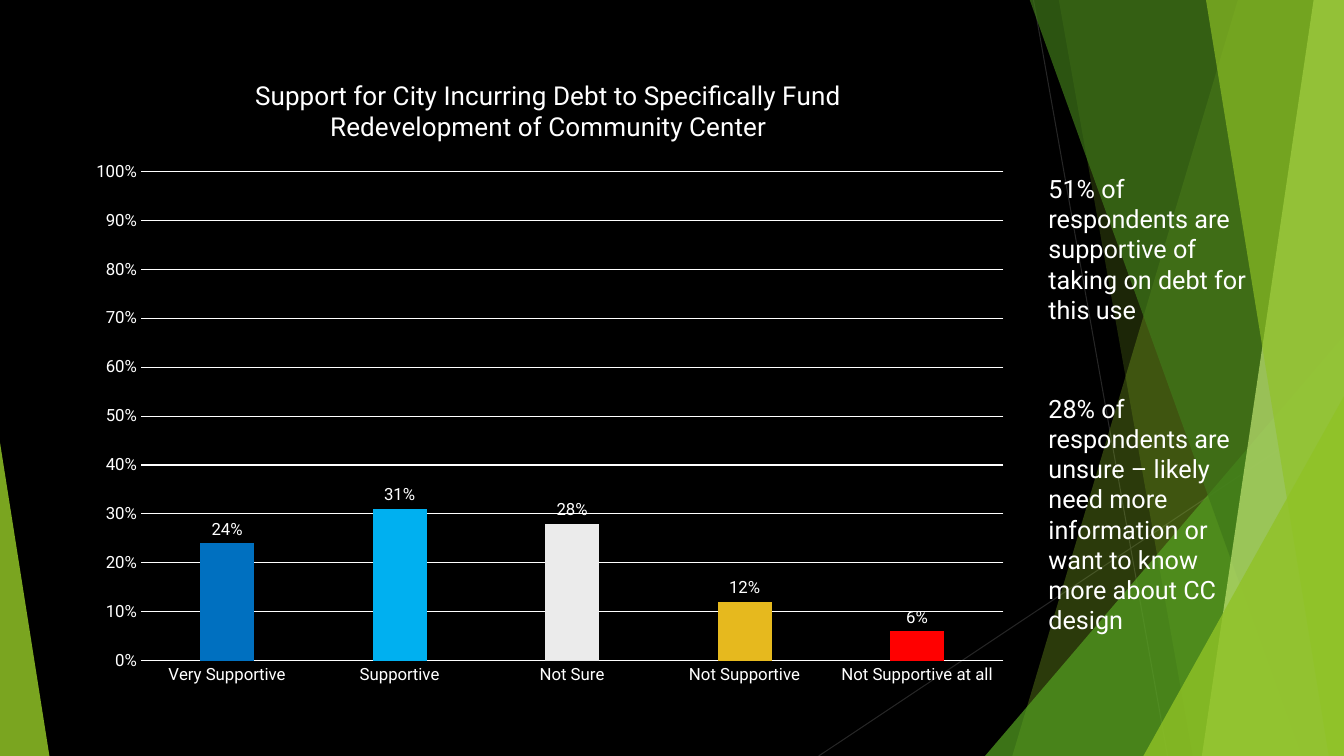
from dataclasses import dataclass

import lxml.etree
import pptx
import pptx.chart.data
import pptx.dml.color
import pptx.enum.chart
import pptx.enum.shapes
import pptx.enum.text
import pptx.oxml
import pptx.oxml.ns
import pptx.util

RGBColor = pptx.dml.color.RGBColor
PX = 9144  # EMU in one px, 100 px to the inch
WIDTH, HEIGHT = 1333, 750
FONT = "Roboto"

BLACK = RGBColor(0x00, 0x00, 0x00)
WHITE = RGBColor(0xFF, 0xFF, 0xFF)
CHARCOAL = RGBColor(0x26, 0x26, 0x26)
LIME = RGBColor(0x90, 0xC2, 0x26)
GREEN = RGBColor(0x54, 0xA0, 0x21)
FOREST = RGBColor(0x3F, 0x78, 0x19)
PALE_LIME = RGBColor(0xC0, 0xE4, 0x74)
BLUE = RGBColor(0x00, 0x70, 0xC0)
SKY = RGBColor(0x00, 0xB0, 0xF0)
SILVER = RGBColor(0xEB, 0xEB, 0xEB)
GOLD = RGBColor(0xE6, 0xB9, 0x1E)
RED = RGBColor(0xFF, 0x00, 0x00)


@dataclass(frozen=True)
class Ray:
    """A thin line across the background."""
    start: tuple[int, int]
    end: tuple[int, int]


@dataclass(frozen=True)
class Facet:
    """A slanted panel that reaches the right edge of the slide."""
    top_x: int
    bottom_x: int
    color: RGBColor
    opacity: int


@dataclass(frozen=True)
class Wedge:
    """A triangle on the bottom edge; apex 0 is left, 1 is right."""
    left: int
    top: int
    width: int
    apex: int
    color: RGBColor
    opacity: int


@dataclass(frozen=True)
class Answer:
    label: str
    share: float
    color: RGBColor


@dataclass(frozen=True)
class Remark:
    top: int
    height: int
    text: str


RAYS = [Ray((1025, 0), (1158, 750)), Ray((1333, 403), (812, 750))]
DECORATION = [
    Facet(1228, 1004, LIME, 30),
    Facet(1050, 1183, LIME, 20),
    Wedge(977, 333, 356, 1, GREEN, 72),
    Facet(1021, 1291, FOREST, 70),
    Facet(1303, 1192, PALE_LIME, 70),
    Facet(1196, 1318, LIME, 65),
    Wedge(1134, 393, 199, 1, LIME, 80),
    Wedge(0, 439, 49, 0, LIME, 85),
]
CHART_TITLE = ("Support for City Incurring Debt to Specifically Fund "
               "Redevelopment of Community Center")
ANSWERS = [
    Answer("Very Supportive", 0.24, BLUE),
    Answer("Supportive", 0.31, SKY),
    Answer("Not Sure", 0.28, SILVER),
    Answer("Not Supportive", 0.12, GOLD),
    Answer("Not Supportive at all", 0.06, RED),
]
REMARKS = [
    Remark(167, 162, "51% of respondents are supportive of taking on debt for this use"),
    Remark(385, 252, "28% of respondents are unsure – likely need more information "
                     "or want to know more about CC design"),
]


def style_font(font, size: float) -> None:
    font.name = FONT
    font.size = pptx.util.Pt(size)
    font.bold = False
    font.color.rgb = WHITE


def style_line(line, color: RGBColor) -> None:
    line.color.rgb = color
    line.width = pptx.util.Pt(0.75)


def add_ray(slide, ray: Ray) -> None:
    connector = slide.shapes.add_connector(
        pptx.enum.shapes.MSO_CONNECTOR.STRAIGHT,
        *(value * PX for value in ray.start + ray.end))
    style_line(connector.line, CHARCOAL)
    lxml.etree.SubElement(connector._element.spPr, pptx.oxml.ns.qn("a:effectLst"))


def add_decoration(slide, part: Facet | Wedge) -> None:
    if isinstance(part, Facet):
        builder = slide.shapes.build_freeform(part.top_x, -1, scale=PX)
        builder.add_line_segments([(WIDTH, -1), (WIDTH, HEIGHT), (part.bottom_x, HEIGHT)])
        shape = builder.convert_to_shape()
    else:
        shape = slide.shapes.add_shape(
            pptx.enum.shapes.MSO_SHAPE.ISOSCELES_TRIANGLE, part.left * PX,
            part.top * PX, part.width * PX, (HEIGHT - part.top) * PX)
        shape.adjustments[0] = part.apex
    shape.shadow.inherit = False
    shape.line.fill.background()
    shape.fill.solid()
    shape.fill.fore_color.rgb = part.color
    color_element = shape._element.spPr.find(".//" + pptx.oxml.ns.qn("a:srgbClr"))
    alpha = lxml.etree.SubElement(color_element, pptx.oxml.ns.qn("a:alpha"))
    alpha.set("val", str(part.opacity * 1000))


def place_plot(chart, left: float, top: float, width: float, height: float) -> None:
    """Fix the inner plot area, in fractions of the chart."""
    plot_area = chart._chartSpace.chart.plotArea
    for layout in plot_area.findall(pptx.oxml.ns.qn("c:layout")):
        plot_area.remove(layout)
    plot_area.insert(0, pptx.oxml.parse_xml(
        f'<c:layout {pptx.oxml.ns.nsdecls("c")}><c:manualLayout>'
        '<c:layoutTarget val="inner"/><c:xMode val="edge"/><c:yMode val="edge"/>'
        f'<c:x val="{left}"/><c:y val="{top}"/><c:w val="{width}"/><c:h val="{height}"/>'
        '</c:manualLayout></c:layout>'))


def add_support_chart(slide) -> None:
    data = pptx.chart.data.CategoryChartData(number_format="0%")
    data.categories = [answer.label for answer in ANSWERS]
    data.add_series(CHART_TITLE, [answer.share for answer in ANSWERS])
    chart = slide.shapes.add_chart(
        pptx.enum.chart.XL_CHART_TYPE.COLUMN_CLUSTERED,
        74 * PX, 55 * PX, 940 * PX, 639 * PX, data).chart
    style_font(chart.font, 10)
    chart.has_legend = False
    place_plot(chart, 0.07, 0.18, 0.91, 0.76)

    # Title
    chart.has_title = True
    chart.chart_title.include_in_layout = False
    chart.chart_title.text_frame.text = CHART_TITLE
    style_font(chart.chart_title.text_frame.paragraphs[0].font, 18.6)

    # Axes
    for axis in (chart.category_axis, chart.value_axis):
        axis.major_tick_mark = pptx.enum.chart.XL_TICK_MARK.NONE
        axis.minor_tick_mark = pptx.enum.chart.XL_TICK_MARK.NONE
        style_font(axis.tick_labels.font, 12)
    style_line(chart.category_axis.format.line, WHITE)
    value_axis = chart.value_axis
    value_axis.minimum_scale, value_axis.maximum_scale = 0, 1
    value_axis.major_unit = 0.1
    value_axis.format.line.fill.background()
    value_axis.tick_labels.number_format = "0%"
    value_axis.tick_labels.number_format_is_linked = False
    style_line(value_axis.major_gridlines.format.line, WHITE)

    # Columns and their labels
    plot = chart.plots[0]
    plot.vary_by_categories = False
    plot.gap_width, plot.overlap = 219, -27
    series = plot.series[0]
    series.format.fill.solid()
    series.format.fill.fore_color.rgb = LIME
    for index, answer in enumerate(ANSWERS):
        fill = series.points[index].format.fill
        fill.solid()
        fill.fore_color.rgb = answer.color
    labels = series.data_labels
    labels.show_value = True
    labels.number_format = "0%"
    labels.number_format_is_linked = False
    labels.position = pptx.enum.chart.XL_LABEL_POSITION.OUTSIDE_END
    style_font(labels.font, 12)


def add_remark(slide, remark: Remark) -> None:
    frame = slide.shapes.add_textbox(
        1030 * PX, remark.top * PX, 220 * PX, remark.height * PX).text_frame
    frame.word_wrap = True
    frame.auto_size = pptx.enum.text.MSO_AUTO_SIZE.SHAPE_TO_FIT_TEXT
    frame.text = remark.text
    style_font(frame.paragraphs[0].font, 18)


def main() -> None:
    presentation = pptx.Presentation()
    presentation.slide_width, presentation.slide_height = WIDTH * PX, HEIGHT * PX
    slide = presentation.slides.add_slide(presentation.slide_layouts[6])
    slide.background.fill.solid()
    slide.background.fill.fore_color.rgb = BLACK
    for ray in RAYS:
        add_ray(slide, ray)
    for part in DECORATION:
        add_decoration(slide, part)
    add_support_chart(slide)
    for remark in REMARKS:
        add_remark(slide, remark)
    presentation.save("out.pptx")


if __name__ == "__main__":
    main()
